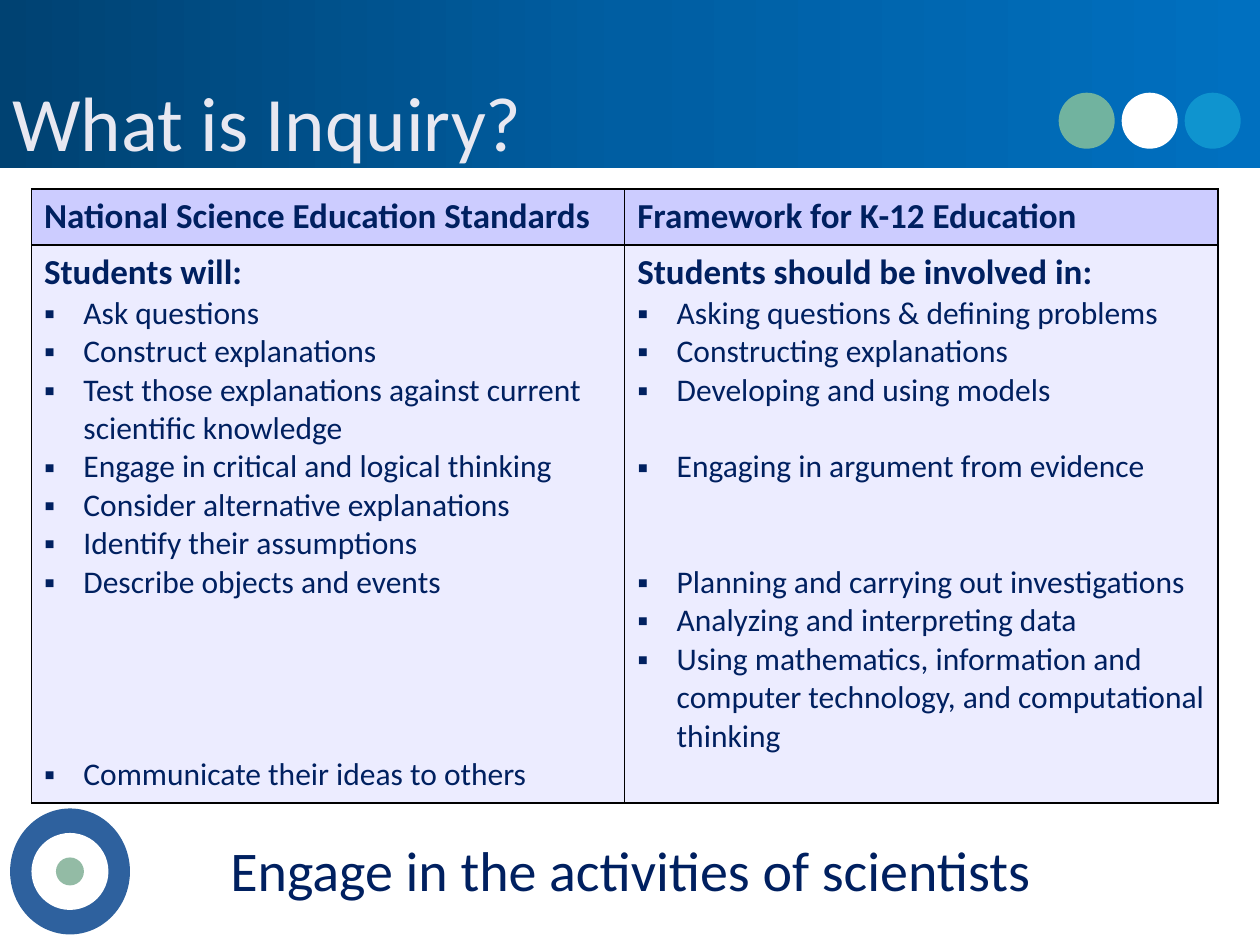
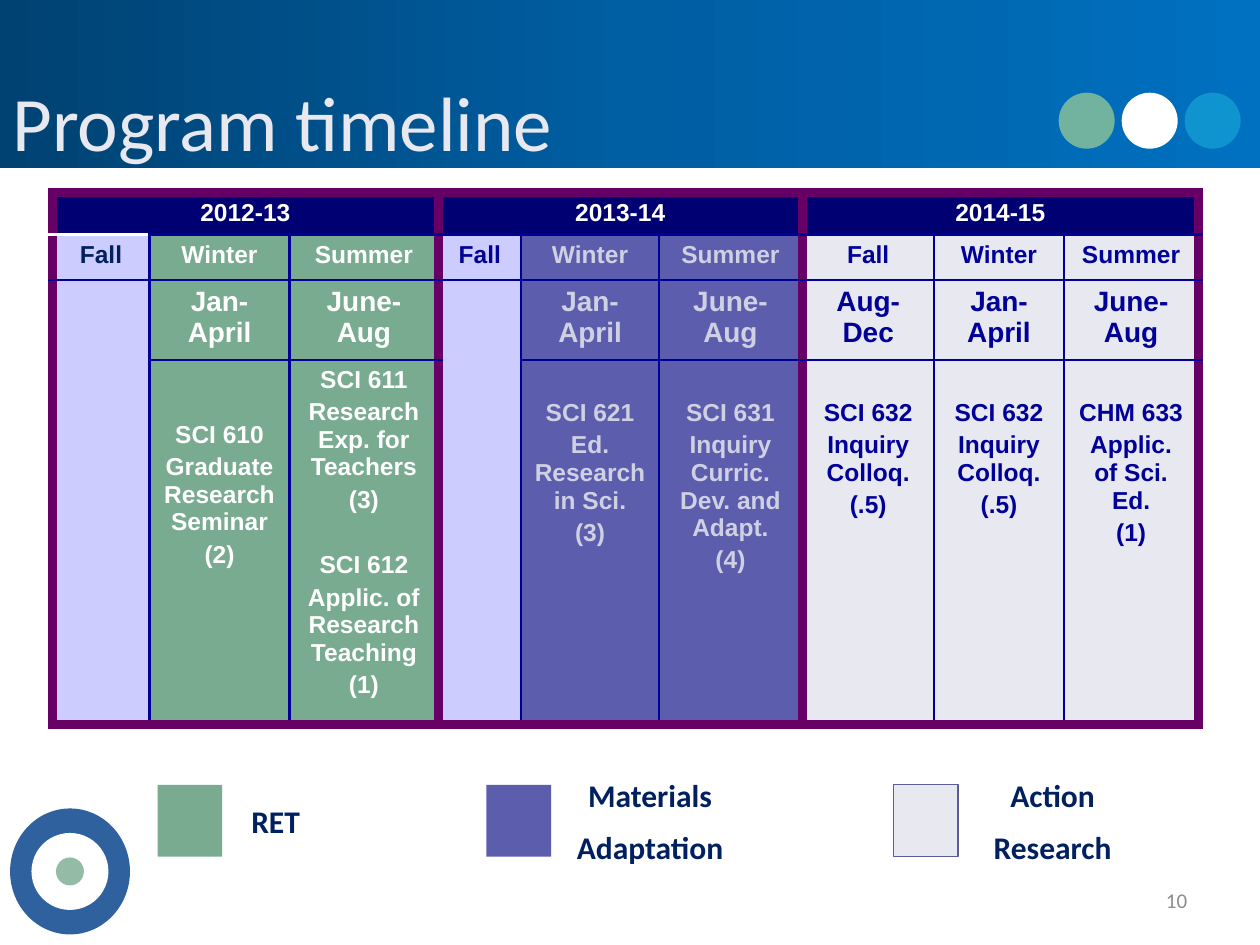
from copy import deepcopy

from lxml.etree import SubElement
from pptx import Presentation
from pptx.dml.color import RGBColor
from pptx.enum.shapes import MSO_SHAPE
from pptx.enum.text import MSO_ANCHOR, PP_ALIGN
from pptx.oxml.ns import qn
from pptx.util import Pt

WHITE = RGBColor(0xFF, 0xFF, 0xFF)
BLACK = RGBColor(0x00, 0x00, 0x00)
NAVY = RGBColor(0x00, 0x20, 0x60)
MIST = RGBColor(0xE8, 0xE8, 0xF1)
LAVENDER = RGBColor(0xCC, 0xCC, 0xFF)
PALE_LAVENDER = RGBColor(0xEC, 0xEC, 0xFF)
YEAR_BLUE = RGBColor(0x00, 0x00, 0x73)
GRID_BLUE = RGBColor(0x00, 0x00, 0x99)
PURPLE = RGBColor(0x66, 0x00, 0x66)
GREEN = RGBColor(0x78, 0xAB, 0x90)
VIOLET = RGBColor(0x5D, 0x5D, 0xAE)
VIOLET_EDGE = RGBColor(0x5B, 0x5B, 0x98)
VIOLET_TEXT = RGBColor(0xD0, 0xD0, 0xE3)
PAGE_GREY = RGBColor(0x8C, 0x8C, 0x8C)
DOT_GREEN = RGBColor(0x71, 0xB3, 0x9F)
DOT_BLUE = RGBColor(0x0F, 0x94, 0xCF)
RING_BLUE = RGBColor(0x2E, 0x61, 0x9E)
RING_GREEN = RGBColor(0x93, 0xBB, 0xA5)
BAND_COLORS = (RGBColor(0x00, 0x42, 0x72), RGBColor(0x00, 0x5E, 0xA2),
               RGBColor(0x00, 0x70, 0xC0))

LINE = 22
HANG = 22.5
PARAGRAPH_GAP = 2.8

STANDARDS = [
    ("National Science Education Standards", "Students will:", [
        ("Ask questions", 0),
        ("Construct explanations", 0),
        ("Test those explanations against current scientific knowledge", 0),
        ("Engage in critical and logical thinking", 0),
        ("Consider alternative explanations", 0),
        ("Identify their assumptions", 0),
        ("Describe objects and events", 0),
        ("Communicate their ideas to others", 4)]),
    ("Framework for K-12 Education", "Students should be involved in:", [
        ("Asking questions & defining problems", 0),
        ("Constructing explanations", 0),
        ("Developing and using models", 0),
        ("Engaging in argument from evidence", 1),
        ("Planning and carrying out investigations", 2),
        ("Analyzing and interpreting data", 0),
        ("Using mathematics, information and computer technology, "
         "and computational thinking", 0)]),
]

YEARS = ["2012-13", "2013-14", "2014-15"]
TERM_WIDTHS = [55.5, 80, 85, 47.5, 78.5, 82, 75.5, 74, 77]
TIMELINE_HEIGHTS = [23, 26, 43.5, 197]
TERMS = [
    ("Fall", None, [], LAVENDER, NAVY, 0),
    ("Winter", "Jan-April",
     [["SCI 610", "Graduate Research Seminar", "(2)"]], GREEN, WHITE, 31.4),
    ("Summer", "June-Aug",
     [["SCI 611", "Research Exp. for Teachers", "(3)"],
      ["SCI 612", "Applic. of Research Teaching", "(1)"]], GREEN, WHITE, 0),
    ("Fall", None, [], LAVENDER, GRID_BLUE, 0),
    ("Winter", "Jan-April",
     [["SCI 621", "Ed. Research in Sci.", "(3)"]], VIOLET, VIOLET_TEXT, 18.9),
    ("Summer", "June-Aug",
     [["SCI 631", "Inquiry Curric. Dev. and Adapt.", "(4)"]],
     VIOLET, VIOLET_TEXT, 18.9),
    ("Fall", "Aug-Dec",
     [["SCI 632", "Inquiry Colloq.", "(.5)"]], MIST, GRID_BLUE, 18.9),
    ("Winter", "Jan-April",
     [["SCI 632", "Inquiry Colloq.", "(.5)"]], MIST, GRID_BLUE, 18.9),
    ("Summer", "June-Aug",
     [["CHM 633", "Applic. of Sci. Ed.", "(1)"]], MIST, GRID_BLUE, 18.9),
]
LEGEND = [
    (["RET"], GREEN, None, 90, 45),
    (["Materials", "Adaptation"], VIOLET, None, 278, 97),
    (["Action", "Research"], MIST, VIOLET_EDGE, 510.5, 92),
]


def write(frame, text, *, size, color=NAVY, font="Calibri", bold=False,
          align=PP_ALIGN.LEFT, before=0, bullet=None):
    """Add one formatted paragraph, using the empty first one when it is free."""
    first = frame.paragraphs[0]
    paragraph = frame.add_paragraph() if first.runs else first
    paragraph.alignment = align
    paragraph.space_before = Pt(before)
    run = paragraph.add_run()
    run.text = text
    run.font.name, run.font.size, run.font.bold = font, Pt(size), bold
    run.font.color.rgb = color
    if bullet:
        properties = paragraph._p.get_or_add_pPr()
        properties.set("marL", str(Pt(HANG)))
        properties.set("indent", str(-Pt(HANG)))
        SubElement(properties, qn("a:buFont"), typeface="Arial")
        SubElement(properties, qn("a:buChar"), char=bullet)


def add_frame(slide, left, top, width, height, anchor=MSO_ANCHOR.MIDDLE, inset=7.2):
    """Add a wrapping text box and return its text frame."""
    frame = slide.shapes.add_textbox(
        Pt(left), Pt(top), Pt(width), Pt(height)).text_frame
    frame.word_wrap = True
    frame.vertical_anchor = anchor
    frame.margin_left = frame.margin_right = Pt(inset)
    return frame


def add_figure(slide, kind, left, top, width, height, color, edge=None, weight=0.75):
    """Add a flat preset shape with an optional edge."""
    figure = slide.shapes.add_shape(kind, Pt(left), Pt(top), Pt(width), Pt(height))
    figure.shadow.inherit = False
    figure.fill.solid()
    figure.fill.fore_color.rgb = color
    if edge is None:
        figure.line.fill.background()
    else:
        figure.line.color.rgb = edge
        figure.line.width = Pt(weight)
    return figure


def add_band(slide):
    """Add the header band with its three-stop gradient."""
    band = add_figure(slide, MSO_SHAPE.RECTANGLE, 0, 0, 720, 96, BAND_COLORS[0])
    band.fill.gradient()
    band.fill.gradient_angle = 0
    stops = band._element.spPr.find(qn("a:gradFill")).find(qn("a:gsLst"))
    stops.insert(1, deepcopy(stops[0]))
    for index, (stop, color) in enumerate(zip(band.fill.gradient_stops, BAND_COLORS)):
        stop.position = index / 2
        stop.color.rgb = color


def start_slide(deck, title):
    """Add a slide with the shared band, dots, rings and title."""
    slide = deck.slides.add_slide(deck.slide_layouts[6])
    add_band(slide)
    for index, color in enumerate((DOT_GREEN, WHITE, DOT_BLUE)):
        add_figure(slide, MSO_SHAPE.OVAL, 606 + 36 * index, 54, 30, 30,
                   color, color, 2)
    for width, height, color in ((68.5, 72, RING_BLUE), (44, 44, WHITE),
                                 (16, 16, RING_GREEN)):
        add_figure(slide, MSO_SHAPE.OVAL, 40 - width / 2, 498 - height / 2,
                   width, height, color)
    write(add_frame(slide, 0, 24, 648, 90), title, size=44, color=MIST)
    return slide


def add_grid(slide, left, top, widths, heights):
    """Add an unbanded table with the given column widths and row heights."""
    grid = slide.shapes.add_table(len(heights), len(widths), Pt(left), Pt(top),
                                  Pt(sum(widths)), Pt(sum(heights))).table
    grid.first_row = grid.horz_banding = False
    for column, width in zip(grid.columns, widths):
        column.width = Pt(width)
    for row, height in zip(grid.rows, heights):
        row.height = Pt(height)
    return grid


def style_cell(cell, color, edges):
    """Set a cell's borders, given as left, right, top, bottom, and its fill."""
    properties = cell._tc.get_or_add_tcPr()
    for side, (edge_color, weight) in zip("LRTB", edges):
        border = SubElement(properties, qn(f"a:ln{side}"), w=str(Pt(weight)))
        fill = SubElement(border, qn("a:solidFill"))
        SubElement(fill, qn("a:srgbClr"), val=str(edge_color))
    cell.fill.solid()
    cell.fill.fore_color.rgb = color


def add_standards(slide):
    """Add the comparison of the two sets of standards."""
    grid = add_grid(slide, 18, 108, [339, 339], [32, 319])
    edges = [(BLACK, 1)] * 4
    for column, (source, lead, practices) in enumerate(STANDARDS):
        header, body = grid.cell(0, column), grid.cell(1, column)
        style_cell(header, LAVENDER, edges)
        style_cell(body, PALE_LAVENDER, edges)
        write(header.text_frame, source, size=20, bold=True)
        write(body.text_frame, lead, size=20, bold=True)
        for practice, skipped in practices:
            write(body.text_frame, practice, size=18, before=skipped * LINE, bullet="▪")


def timeline_edges(cell, row, column):
    """Return the borders of a timeline cell, heavy around each year."""
    heavy, light, white = (PURPLE, 6), (GRID_BLUE, 1.5), (WHITE, 1.5)
    last_row = row + cell.span_height - 1
    last_column = column + cell.span_width - 1
    edges = [heavy if column % 3 == 0 else light,
             heavy if last_column % 3 == 2 else light,
             heavy if row == 0 else light,
             heavy if last_row == 3 else light]
    if column == 0 and row < 2:
        edges[2 if row else 3] = white
    return edges


def write_courses(cell, courses, color, drop):
    """Write the courses of one term, starting the given drop below the top."""
    cell.margin_top = Pt(3.6 + drop)
    for index, course in enumerate(courses):
        for part, text in enumerate(course):
            between = 2 * PARAGRAPH_GAP + 16 if index else 0
            write(cell.text_frame, text, size=14, color=color, font="Arial", bold=True,
                  align=PP_ALIGN.CENTER, before=PARAGRAPH_GAP if part else between)


def add_timeline(slide):
    """Add the three-year timeline of terms and courses."""
    grid = add_grid(slide, 30, 110, TERM_WIDTHS, TIMELINE_HEIGHTS)
    centred = {"font": "Arial", "bold": True, "align": PP_ALIGN.CENTER}
    for index, year in enumerate(YEARS):
        banner = grid.cell(0, 3 * index)
        banner.merge(grid.cell(0, 3 * index + 2))
        write(banner.text_frame, year, size=14, color=WHITE, **centred)
    for column, (term, months, courses, fill, color, drop) in enumerate(TERMS):
        write(grid.cell(1, column).text_frame, term, size=14, color=color, **centred)
        if months:
            write(grid.cell(2, column).text_frame, months, size=16, color=color,
                  **centred)
            write_courses(grid.cell(3, column), courses, color, drop)
        else:
            grid.cell(2, column).merge(grid.cell(3, column))
        for row in range(4):
            cell = grid.cell(row, column)
            style_cell(cell, fill if row else YEAR_BLUE,
                       timeline_edges(cell, row, column))


def add_legend(slide):
    """Add the colour key below the timeline."""
    for lines, color, edge, left, label_width in LEGEND:
        add_figure(slide, MSO_SHAPE.RECTANGLE, left, 448.5, 37, 41, color, edge)
        label = add_frame(slide, left + 45, 439, label_width, 60, inset=0)
        for index, line in enumerate(lines):
            write(label, line, size=18, bold=True, align=PP_ALIGN.CENTER,
                  before=8.3 * index)


def main():
    """Build and save both slides."""
    deck = Presentation()
    deck.slide_width, deck.slide_height = Pt(720), Pt(540)

    inquiry = start_slide(deck, "What is Inquiry?")
    add_standards(inquiry)
    write(add_frame(inquiry, 93.5, 474, 534, 46, MSO_ANCHOR.TOP),
          "Engage in the activities of scientists", size=32, align=PP_ALIGN.CENTER)

    program = start_slide(deck, "Program timeline")
    add_timeline(program)
    add_legend(program)
    write(add_frame(program, 517.5, 500, 168, 28.5), "10", size=12, color=PAGE_GREY,
          align=PP_ALIGN.RIGHT)

    deck.save("out.pptx")


if __name__ == "__main__":
    main()
